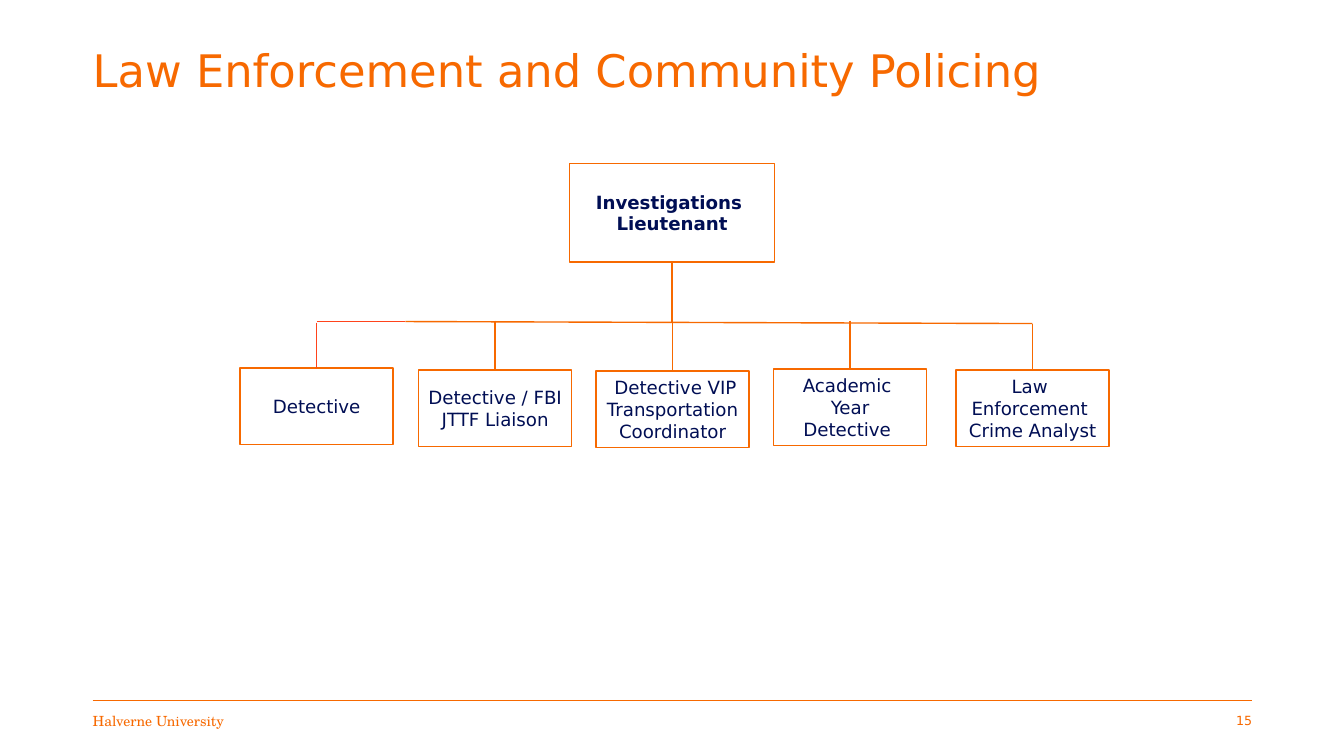
from dataclasses import dataclass

import pptx
import pptx.dml.color
import pptx.enum.shapes
import pptx.enum.text
import pptx.oxml
import pptx.oxml.ns
import pptx.util

COLS, ROWS = 133.3, 75
WIDE, HIGH = pptx.util.Inches(13.33), pptx.util.Inches(7.5)
ALIGN = pptx.enum.text.PP_ALIGN


@dataclass(frozen=True)
class Theme:
    orange: str = "F76900"
    red: str = "FF431B"
    navy: str = "000E54"
    sans: str = "DejaVu Sans"
    serif: str = "TeX Gyre Schola"
    title: float = 32
    body: float = 13
    foot: float = 10
    page: float = 9
    thin: float = 0.5
    line: float = 1


@dataclass(frozen=True)
class Box:
    text: str
    left: float
    top: float
    width: float = 15.2
    height: float = 7.6
    bold: bool = False

    @property
    def mid(self) -> float:
        return self.left + self.width / 2


@dataclass(frozen=True)
class Leaf:
    box: Box
    start: float
    color: str


THEME = Theme()
BOSS = Box("Investigations \nLieutenant", 56.5, 16.2, 20.3, 9.8, True)
TEAM = [
    Leaf(Box("Detective", 23.8, 36.5), 32, THEME.red),
    Leaf(Box("Detective / FBI JTTF Liaison", 41.5, 36.7), 31.8, THEME.orange),
    Leaf(Box(" Detective VIP Transportation\nCoordinator", 59.1, 36.8), 32, THEME.orange),
    Leaf(Box("Academic \vYear\nDetective ", 76.7, 36.6), 31.8, THEME.orange),
    Leaf(Box("Law \nEnforcement \nCrime Analyst", 94.8, 36.7), 32.1, THEME.orange),
]


def col(n: float) -> int:
    return round(WIDE * n / COLS)


def row(n: float) -> int:
    return round(HIGH * n / ROWS)


def tint(name: str) -> pptx.dml.color.RGBColor:
    return pptx.dml.color.RGBColor.from_string(name)


def write(shape, text: str, *, size: float, color: str, font: str = THEME.sans,
          bold: bool = False, align=ALIGN.LEFT, inset: float = 0,
          wrap: bool = True, space: float = 1) -> None:
    frame = shape.text_frame
    frame.text = text
    frame.word_wrap = wrap
    frame.vertical_anchor = pptx.enum.text.MSO_ANCHOR.MIDDLE
    frame.margin_left = frame.margin_right = col(inset)
    for para in frame.paragraphs:
        para.alignment = align
        para.line_spacing = space
        for run in para.runs:
            run.font.size = pptx.util.Pt(size)
            run.font.name = font
            run.font.bold = bold
            run.font.color.rgb = tint(color)


def label(slide, text: str, left: float, top: float, width: float,
          height: float, **style) -> None:
    area = slide.shapes.add_textbox(col(left), row(top), col(width), row(height))
    write(area, text, **style)


def draw(slide, box: Box):
    rect = slide.shapes.add_shape(
        pptx.enum.shapes.MSO_SHAPE.RECTANGLE,
        col(box.left), row(box.top), col(box.width), row(box.height))
    rect.shadow.inherit = False
    rect.fill.background()
    rect.line.color.rgb = tint(THEME.orange)
    rect.line.width = pptx.util.Pt(THEME.line)
    write(rect, box.text, size=THEME.body, color=THEME.navy, bold=box.bold,
          align=ALIGN.CENTER, inset=1)
    return rect


def link(slide, x1: float, y1: float, x2: float, y2: float,
         color: str = THEME.orange, width: float = THEME.line):
    line = slide.shapes.add_connector(
        pptx.enum.shapes.MSO_CONNECTOR.STRAIGHT, col(x1), row(y1), col(x2), row(y2))
    line.line.color.rgb = tint(color)
    line.line.width = pptx.util.Pt(width)
    line._element.spPr.append(
        pptx.oxml.parse_xml(f"<a:effectLst {pptx.oxml.ns.nsdecls('a')}/>"))
    return line


def main() -> None:
    deck = pptx.Presentation()
    deck.slide_width, deck.slide_height = WIDE, HIGH
    slide = deck.slides.add_slide(deck.slide_layouts[6])

    link(slide, 9.2, 69.5, 124.2, 69.5, width=THEME.thin)
    label(slide, "Halverne University", 9.2, 69.5, 21, 4, size=THEME.foot,
          color=THEME.orange, font=THEME.serif, wrap=False)
    label(slide, "15", 103.2, 69.5, 21, 4, size=THEME.page,
          color=THEME.orange, align=ALIGN.RIGHT, wrap=False)
    label(slide, "Law Enforcement and Community Policing", 9.2, 0, 115, 14.5,
          size=THEME.title, color=THEME.orange, space=0.9)

    boss = draw(slide, BOSS)
    trunk = link(slide, BOSS.mid, BOSS.top + BOSS.height, BOSS.mid, 32)
    trunk.begin_connect(boss, 2)
    link(slide, 40.2, 31.9, TEAM[0].box.mid, 31.9, TEAM[0].color)
    link(slide, 40.2, 31.9, TEAM[-1].box.mid, 32.1)
    for leaf in TEAM:
        rect = draw(slide, leaf.box)
        stub = link(slide, leaf.box.mid, leaf.start, leaf.box.mid, leaf.box.top, leaf.color)
        stub.end_connect(rect, 0)

    deck.save("out.pptx")


if __name__ == "__main__":
    main()
